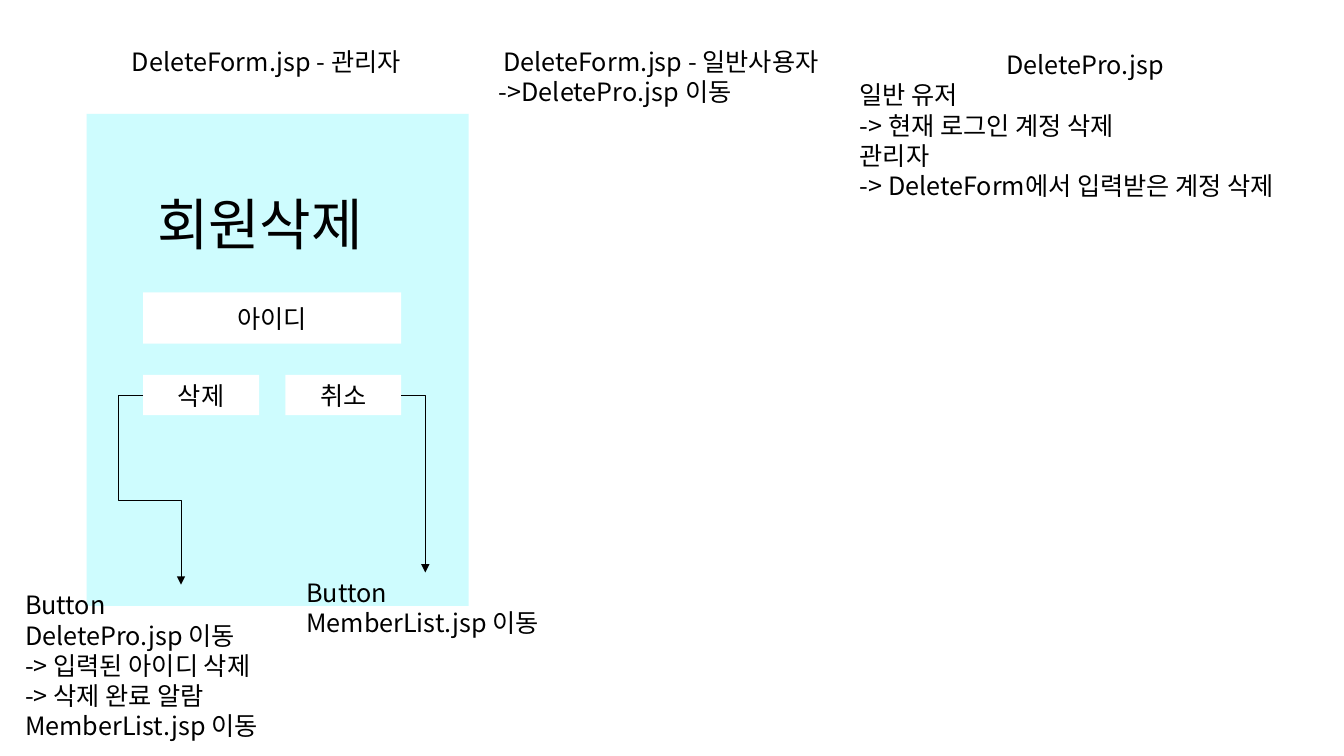
"""Build the member deletion flow slide."""
import pptx
import pptx.util
import pptx.dml.color
import pptx.enum.shapes
import pptx.enum.text
import pptx.oxml.ns
import lxml.etree

BLACK = pptx.dml.color.RGBColor(0x00, 0x00, 0x00)
WHITE = pptx.dml.color.RGBColor(0xFF, 0xFF, 0xFF)
CYAN = pptx.dml.color.RGBColor(0xCE, 0xFC, 0xFE)
FONT = "Noto Sans CJK KR"
LEFT = pptx.enum.text.PP_ALIGN.LEFT
MID = pptx.enum.text.PP_ALIGN.CENTER
TOP = pptx.enum.text.MSO_ANCHOR.TOP
qn = pptx.oxml.ns.qn

deck = pptx.Presentation()
deck.slide_width = pptx.util.Inches(13.33)
deck.slide_height = pptx.util.Inches(7.5)
slide = deck.slides.add_slide(deck.slide_layouts[6])
shapes = slide.shapes


def place(x, y, w, h, fill=None):
    """Add a text box or a filled box, in percent of the slide."""
    wide, high = deck.slide_width / 100, deck.slide_height / 100
    area = [int(n) for n in (x * wide, y * high, w * wide, h * high)]
    if fill is None:
        return shapes.add_textbox(*area)
    box = shapes.add_shape(pptx.enum.shapes.MSO_SHAPE.RECTANGLE, *area)
    box.shadow.inherit = False
    box.fill.solid()
    box.fill.fore_color.rgb = fill
    box.line.fill.background()
    return box


def write(box, lines, head=LEFT, size=18, grow=True):
    """Write the lines, with the first one aligned by head."""
    frame = box.text_frame
    frame.word_wrap = True
    if grow:
        frame.auto_size = pptx.enum.text.MSO_AUTO_SIZE.SHAPE_TO_FIT_TEXT
        frame.vertical_anchor = TOP
    for row, line in enumerate(lines):
        para = frame.add_paragraph() if row else frame.paragraphs[0]
        para.alignment = LEFT if row else head
        run = para.add_run()
        run.text = line
        run.font.size = pptx.util.Pt(size)
        run.font.name = FONT
        run.font.color.rgb = BLACK
        asian = lxml.etree.SubElement(run.font._element, qn("a:ea"))
        asian.set("typeface", FONT)


write(place(63.23, 5.87, 35.03, 21.6),
      ["DeletePro.jsp", "일반 유저", "-> 현재 로그인 계정 삭제", "관리자",
       "-> DeleteForm에서 입력받은 계정 삭제"], MID)
write(place(9.08, 5.47, 23.25, 5.33), ["DeleteForm.jsp - 관리자"])
write(place(36.38, 5.47, 25.58, 9.47),
      ["DeleteForm.jsp - 일반사용자", "->DeletePro.jsp 이동"], MID)

place(6.45, 15.07, 28.43, 65.07, CYAN)
write(place(10.95, 24.4, 18.6, 10.27), ["회원삭제"], size=40)
write(place(10.65, 38.67, 19.2, 6.8, WHITE), ["아이디"], MID, grow=False)

flows = [
    ("삭제", 10.65, 1, "bentConnector4", [-66300, 55400],
     (1.13, 77.33, 24.68, 21.6),
     ["Button", "DeletePro.jsp 이동", "-> 입력된 아이디 삭제",
      "-> 삭제 완료 알람", "MemberList.jsp 이동"]),
    ("취소", 21.23, 3, "bentConnector2", [],
     (22.05, 75.73, 19.2, 9.47), ["Button", "MemberList.jsp 이동"]),
]
for label, x, side, bend, turns, area, lines in flows:
    key = place(x, 49.6, 8.63, 5.33, WHITE)
    write(key, [label], MID)
    note = place(*area)
    write(note, lines)
    link = shapes.add_connector(pptx.enum.shapes.MSO_CONNECTOR.ELBOW, 0, 0, 0, 0)
    link.begin_connect(key, side)
    link.end_connect(note, 0)
    link.line.color.rgb = BLACK
    link.line.width = pptx.util.Pt(0.5)
    props = link._element.spPr
    lxml.etree.SubElement(props.find(qn("a:ln")), qn("a:tailEnd")).set("type", "triangle")
    lxml.etree.SubElement(props, qn("a:effectLst"))
    shape = props.find(qn("a:prstGeom"))
    shape.set("prst", bend)
    guides = shape.find(qn("a:avLst"))
    for spot, turn in enumerate(turns, 1):
        guide = lxml.etree.SubElement(guides, qn("a:gd"))
        guide.set("name", f"adj{spot}")
        guide.set("fmla", f"val {turn}")

deck.save("out.pptx")
